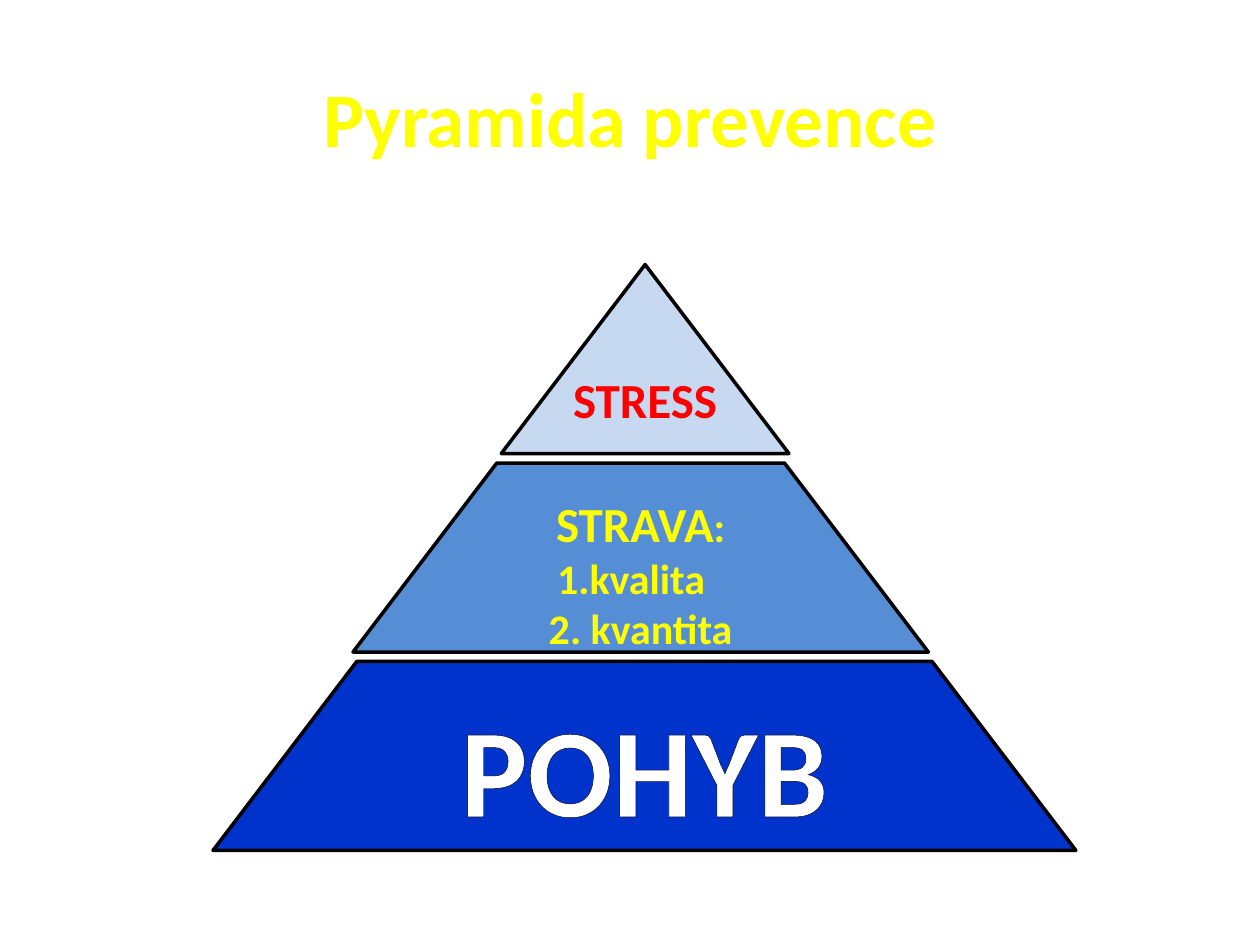
from lxml import etree
from pptx import Presentation
from pptx.dml.color import RGBColor
from pptx.enum.shapes import MSO_SHAPE
from pptx.enum.text import MSO_ANCHOR, MSO_AUTO_SIZE, PP_ALIGN
from pptx.oxml.ns import qn
from pptx.util import Inches, Pt

TRAP = MSO_SHAPE.TRAPEZOID
MID, TOP = MSO_ANCHOR.MIDDLE, MSO_ANCHOR.TOP
CENTER, LEFT = PP_ALIGN.CENTER, PP_ALIGN.LEFT


class Theme:
    font = "Calibri"
    yellow, white, red, black = "FFFF00", "FFFFFF", "FF0000", "000000"
    deep, blue, pale = "0033CC", "558ED5", "C6D9F1"
    title, huge, large, body = 44, 72, 28, 24
    edge, rim = 2, 0.75


# Content: paragraphs are lists of (text, size) runs
TITLE = [[("Pyramida prevence", Theme.title)]]
PEAK = [[("STRESS", Theme.large)]]
FOOD = [[("STRAVA", Theme.large), (":", Theme.body)],
        [("1.kvalita  ", Theme.body)],
        [("2. kvantita", Theme.body)]]
MOVE = [[("POHYB", Theme.huge)]]

# Tiers from the base up: units wide, centre, fill, text colour, text
TIERS = [
    (3, 5.115, Theme.deep, Theme.white, MOVE),
    (2, 5.085, Theme.blue, Theme.yellow, FOOD),
    (1, 5.12, Theme.pale, None, []),
]
UNIT, HIGH, PITCH, PEAK_Y = 2.283, 1.5, 1.575, 2.1
SLOPE = UNIT / 2 / HIGH


def rgb(code):
    return RGBColor.from_string(code)


def rim(run):
    """Outline the letters of a run."""
    props = run.font._element
    line = etree.Element(qn("a:ln"), w=str(Pt(Theme.rim)))
    fill = etree.SubElement(line, qn("a:solidFill"))
    etree.SubElement(fill, qn("a:srgbClr"), val=Theme.black)
    props.insert(0, line)


def write(frame, paras, color, align=CENTER, anchor=MID):
    frame.vertical_anchor = anchor
    for i, runs in enumerate(paras):
        para = frame.add_paragraph() if i else frame.paragraphs[0]
        para.alignment = align
        for text, size in runs:
            run = para.add_run()
            run.text = text
            font = run.font
            font.name, font.size, font.bold = Theme.font, Pt(size), True
            font.color.rgb = rgb(color)
            rim(run)


def place(shape, *box):
    shape.left, shape.top, shape.width, shape.height = map(Inches, box)


def main():
    deck = Presentation()
    deck.slide_width, deck.slide_height = Inches(10), Inches(7.5)
    slide = deck.slides.add_slide(deck.slide_layouts[5])
    shapes = slide.shapes

    # Title
    place(shapes.title, 0.5, 0.3, 9, 1.25)
    write(shapes.title.text_frame, TITLE, Theme.yellow)

    # Pyramid
    for units, mid, fill, color, paras in TIERS:
        wide = units * UNIT
        box = (mid - wide / 2, PEAK_Y + (units - 1) * PITCH, wide, HIGH)
        tier = shapes.add_shape(TRAP, *map(Inches, box))
        tier.adjustments[0] = SLOPE
        tier.shadow.inherit = False
        tier.fill.solid()
        tier.fill.fore_color.rgb = rgb(fill)
        tier.line.color.rgb = rgb(Theme.black)
        tier.line.width = Pt(Theme.edge)
        write(tier.text_frame, paras, color)

    # Label on the peak
    label = shapes.add_textbox(*map(Inches, (4.45, 2.88, 1.36, 0.57)))
    label.text_frame.word_wrap = False
    label.text_frame.auto_size = MSO_AUTO_SIZE.SHAPE_TO_FIT_TEXT
    write(label.text_frame, PEAK, Theme.red, LEFT, TOP)

    deck.save("out.pptx")


if __name__ == "__main__":
    main()
